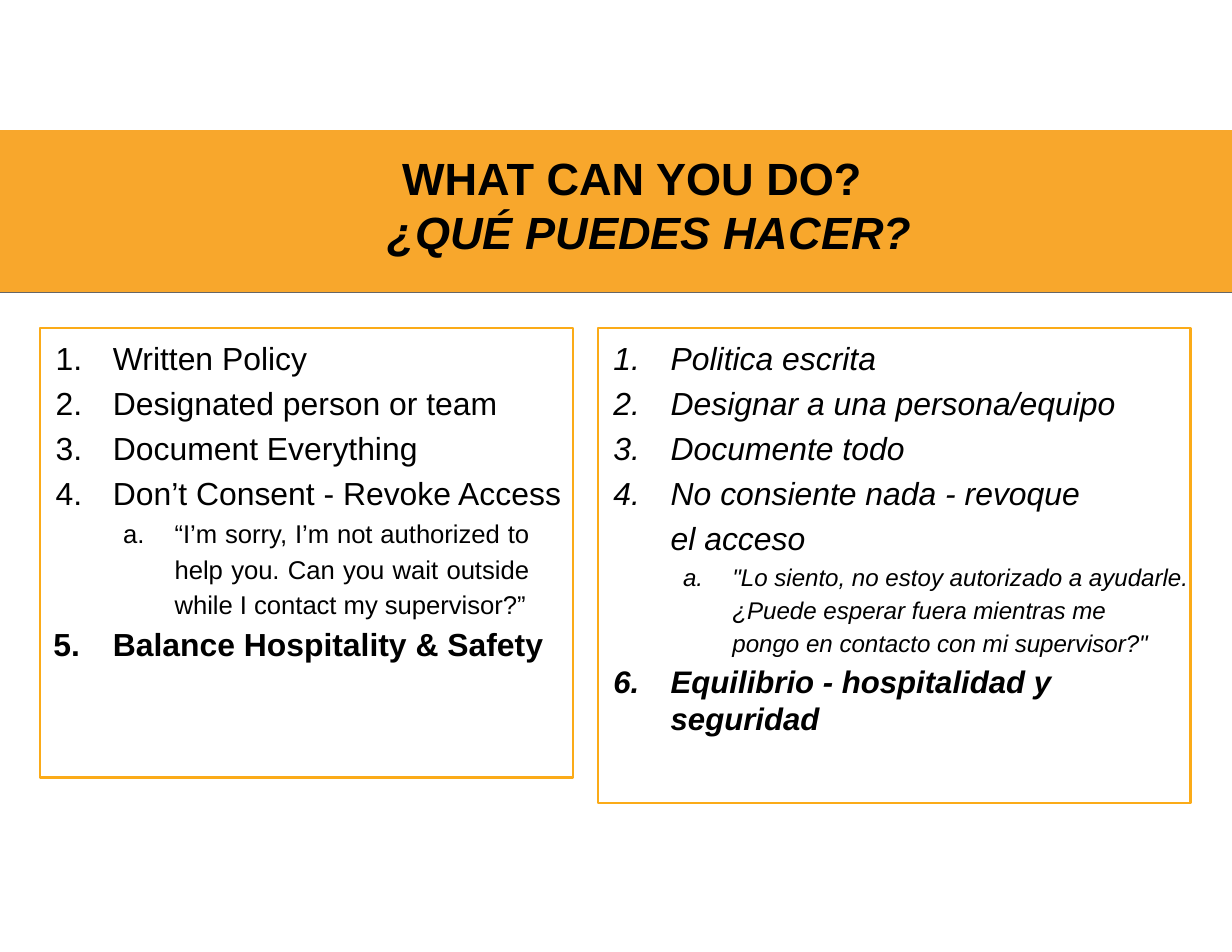
from dataclasses import dataclass

from lxml import etree
from pptx import Presentation
from pptx.dml.color import RGBColor
from pptx.enum.shapes import MSO_CONNECTOR, MSO_SHAPE
from pptx.enum.text import MSO_ANCHOR, MSO_AUTO_SIZE, PP_ALIGN
from pptx.oxml.ns import qn
from pptx.util import Cm, Pt

LEFT, JUSTIFY = PP_ALIGN.LEFT, PP_ALIGN.JUSTIFY
TOP, NO_FIT = MSO_ANCHOR.TOP, MSO_AUTO_SIZE.NONE
RECTANGLE, STRAIGHT = MSO_SHAPE.RECTANGLE, MSO_CONNECTOR.STRAIGHT
NUMBER, LETTER = "arabicPeriod", "alphaLcPeriod"


@dataclass(frozen=True)
class Theme:
    font: str = "Arial"
    text: str = "000000"
    band: str = "F8A72C"
    rule: str = "666666"
    border: str = "FBAB18"
    title: float = 29
    item: float = 20.5
    last: float = 20
    quote: float = 16.5
    quote_small: float = 15.5


@dataclass(frozen=True)
class Item:
    text: str
    size: float
    bold: bool = False
    bullet: str = NUMBER
    start: int = 1
    level: int = 0
    margin: float = 1.65
    indent: float = -1.3
    right: float = 0
    before: float = 4.2
    spacing: float = 1.0
    align: PP_ALIGN = LEFT


THEME = Theme()

ENGLISH = [
    Item("Written Policy", THEME.item, before=0),
    Item("Designated person or team", THEME.item),
    Item("Document Everything", THEME.item),
    Item("Don’t Consent - Revoke Access", THEME.item),
    Item("“I’m sorry, I’m not authorized to help you. Can you wait outside "
         "while I contact my supervisor?”", THEME.quote, bullet=LETTER, level=1,
         margin=3.05, indent=-1.17, right=1, before=1.1, spacing=1.15, align=JUSTIFY),
    Item("Balance Hospitality & Safety", THEME.item, bold=True, indent=-1.35, before=3.2),
]

SPANISH = [
    Item("Politica escrita", THEME.item, before=0),
    Item("Designar a una persona/equipo", THEME.item),
    Item("Documente todo", THEME.item),
    Item("No consiente nada - revoque el acceso", THEME.item, right=2.16, before=0, spacing=1.17),
    Item('"Lo siento, no estoy autorizado a ayudarle.', THEME.quote_small, bullet=LETTER,
         level=1, margin=3.05, indent=-1.12, before=4),
    Item('¿Puede esperar fuera mientras me pongo en contacto con mi supervisor?"',
         THEME.quote_small, bullet="", margin=3.05, indent=0, right=0.64, before=0, spacing=1.14),
    Item("Equilibrio - hospitalidad y seguridad", THEME.last, bold=True, start=6, before=2.9),
]


def add_band(s, top, width, height):
    """Draw the title band and its lower rule behind the placeholders."""
    band = s.shapes.add_shape(RECTANGLE, 0, top, width, height)
    band.shadow.inherit = False
    band.fill.solid()
    band.fill.fore_color.rgb = RGBColor.from_string(THEME.band)
    band.line.fill.background()
    rule = s.shapes.add_connector(STRAIGHT, 0, top + height, width, top + height)
    rule.line.color.rgb = RGBColor.from_string(THEME.rule)
    rule.line.width = Pt(0.82)
    etree.SubElement(rule._element.spPr, qn("a:effectLst"))
    for position, shape in enumerate((band, rule), start=2):
        s.shapes._spTree.insert(position, shape._element)


def place(sp, left, top, width, height):
    """Position a placeholder and return its prepared text frame."""
    sp.left, sp.top, sp.width, sp.height = Cm(left), Cm(top), Cm(width), Cm(height)
    tf = sp.text_frame
    tf.word_wrap, tf.auto_size, tf.vertical_anchor = True, NO_FIT, TOP
    tf.margin_left = tf.margin_right = tf.margin_bottom = 0
    tf.margin_top = Cm(0.25)
    return tf


def format_paragraph(p, item, italic):
    """Apply an item's spacing, indents, bullet and type to a paragraph."""
    p.level, p.alignment = item.level, item.align
    p.line_spacing, p.space_before, p.space_after = item.spacing, Pt(item.before), Pt(0)
    pPr = p._p.get_or_add_pPr()
    pPr.set("marL", str(Cm(item.margin)))
    pPr.set("marR", str(Cm(item.right)))
    pPr.set("indent", str(Cm(item.indent)))
    if item.bullet:
        color = etree.SubElement(pPr, qn("a:buClr"))
        etree.SubElement(color, qn("a:srgbClr"), val=THEME.text)
        etree.SubElement(pPr, qn("a:buFont"), typeface=THEME.font)
        number = etree.SubElement(pPr, qn("a:buAutoNum"), type=item.bullet)
        if item.start > 1:
            number.set("startAt", str(item.start))
    else:
        etree.SubElement(pPr, qn("a:buNone"))
    for r in p.runs:
        r.font.name, r.font.size = THEME.font, Pt(item.size)
        r.font.bold, r.font.italic = item.bold, italic
        r.font.color.rgb = RGBColor.from_string(THEME.text)


def fill_text(tf, items, italics):
    """Write one paragraph per item."""
    tf.text = "\n".join(item.text for item in items)
    for p, item, italic in zip(tf.paragraphs, items, italics):
        format_paragraph(p, item, italic)


def add_title(s):
    """Fill the title with its English and Spanish lines."""
    tf = place(s.shapes.title, 1.5, 3.15, 24.97, 2.74)
    lines = [
        Item("WHAT CAN YOU DO?", THEME.title, True, "", margin=7.62, indent=0, before=0),
        Item("¿QUÉ PUEDES HACER?", THEME.title, True, "", margin=7.29, indent=0, before=0.5),
    ]
    fill_text(tf, lines, [False, True])


def add_list(sp, left, width, height, items, italic):
    """Turn a body placeholder into a bordered numbered list."""
    tf = place(sp, left, 7.44, width, height)
    sp.line.color.rgb = RGBColor.from_string(THEME.border)
    sp.line.width = Pt(1.65)
    fill_text(tf, items, [italic] * len(items))


def main():
    """Build the bilingual slide."""
    prs = Presentation()
    prs.slide_width, prs.slide_height = Cm(27.94), Cm(21.59)
    s = prs.slides.add_slide(prs.slide_layouts[3])
    add_band(s, Cm(2.95), prs.slide_width, Cm(3.69))
    add_title(s)
    add_list(s.placeholders[1], 0.91, 12.09, 10.19, ENGLISH, False)
    add_list(s.placeholders[2], 13.56, 13.44, 10.77, SPANISH, True)
    prs.save("out.pptx")


if __name__ == "__main__":
    main()
